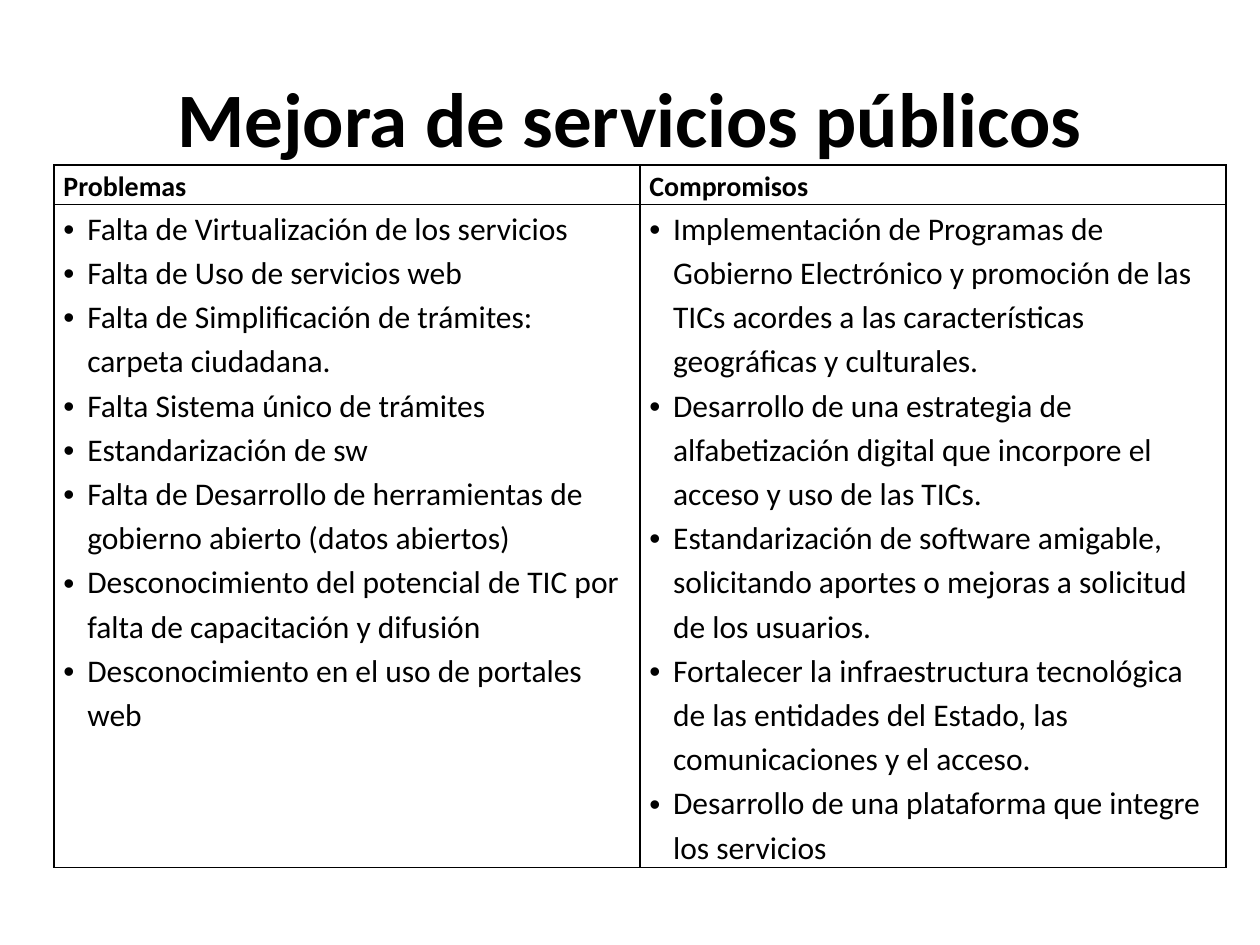
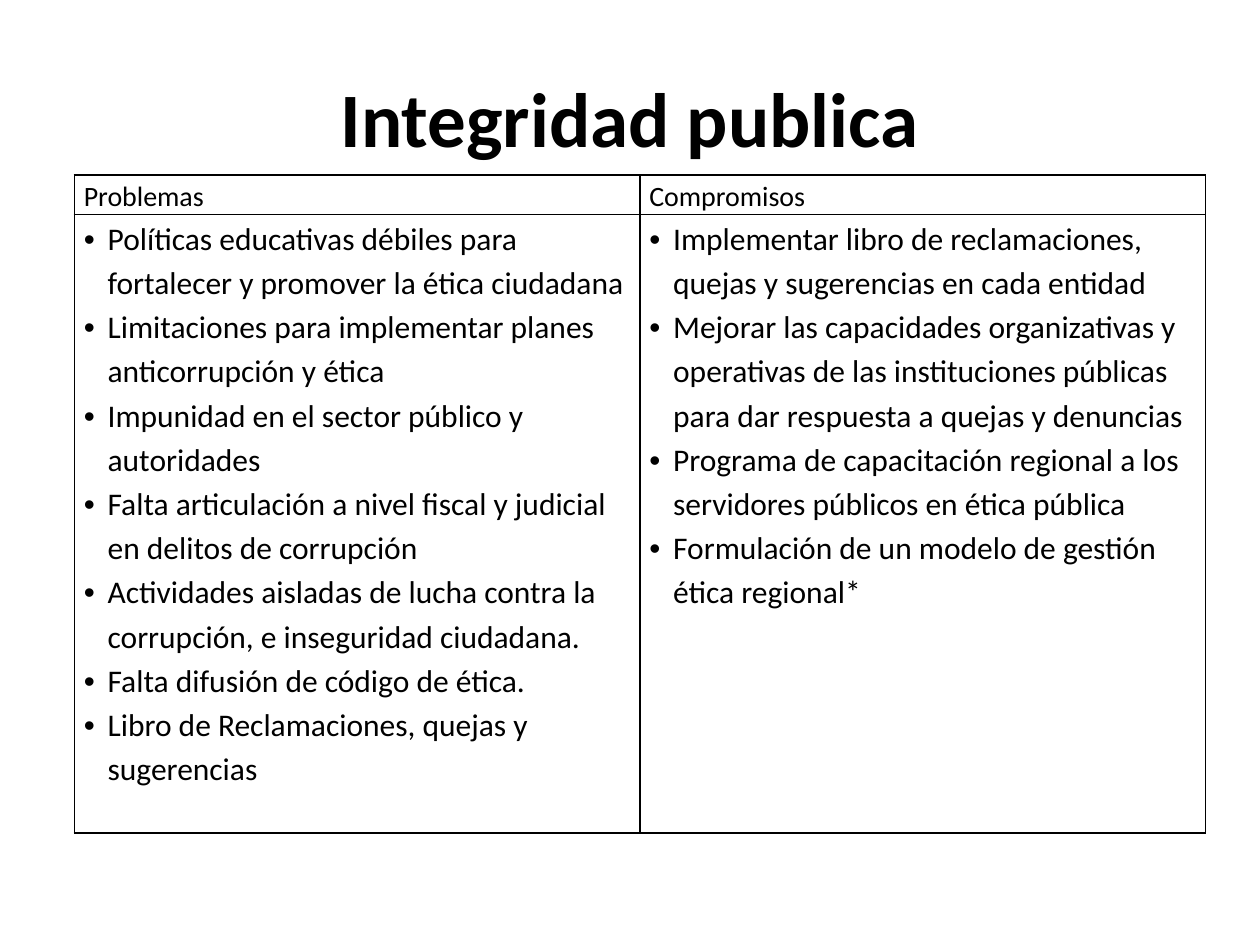
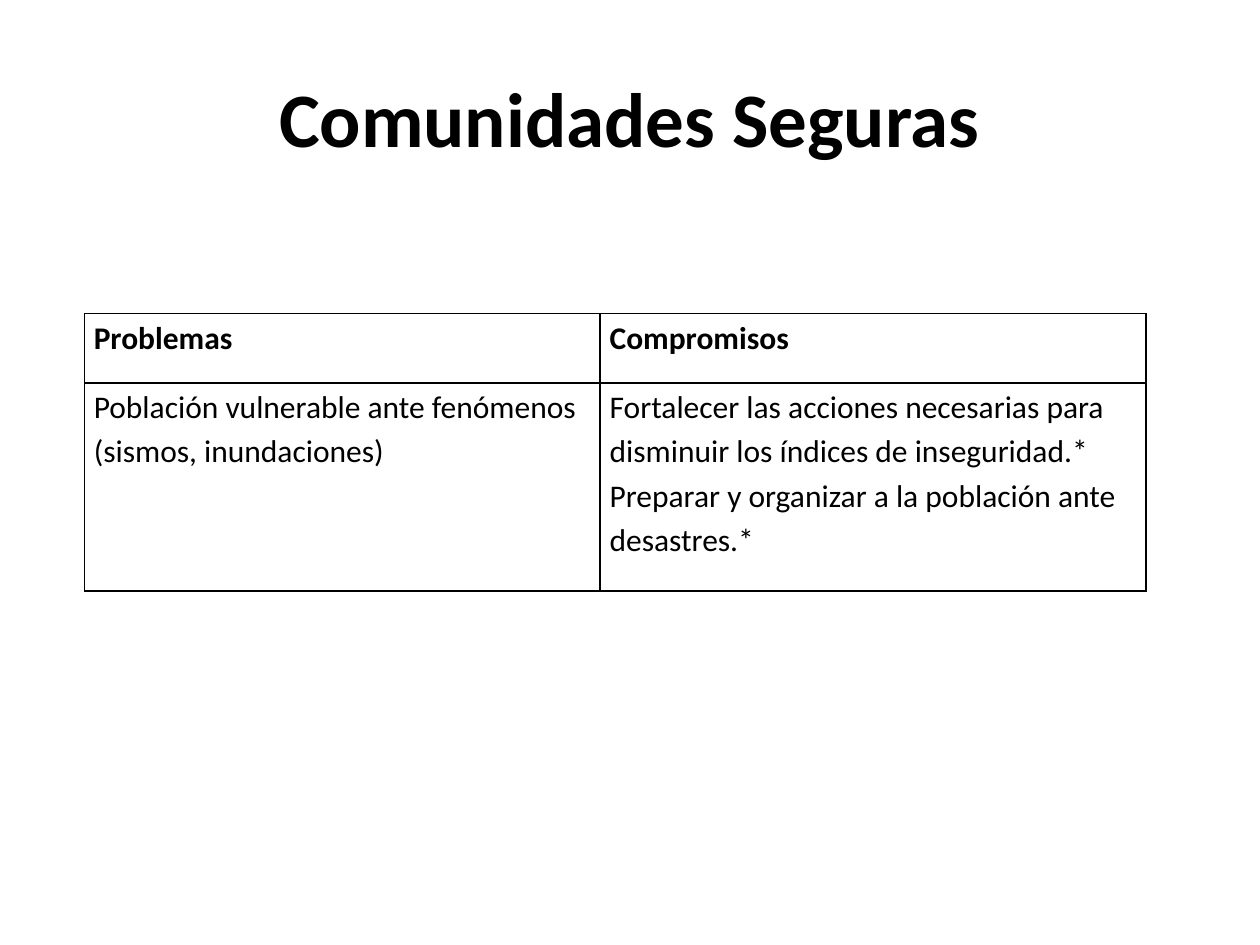
from lxml.etree import SubElement
from pptx import Presentation
from pptx.dml.color import RGBColor
from pptx.enum.text import MSO_ANCHOR as Anchor, PP_ALIGN as Align
from pptx.oxml.ns import qn
from pptx.util import Cm, Pt

TITLE_ONLY = 5
HEADINGS = ["Problemas", "Compromisos"]


def color(value):
    return RGBColor.from_string(value)


def write(tf, lines, size=18, bold=False, ink="000000", font="Calibri",
          align=Align.LEFT, spacing=None, bullet=False, indent=Cm(0.48)):
    """Fill a text frame with one paragraph per line."""
    for i, line in enumerate(lines):
        p = tf.paragraphs[0] if i == 0 else tf.add_paragraph()
        p.alignment = align
        if bullet:
            pPr = p._p.get_or_add_pPr()
            pPr.set("marL", str(indent))
            pPr.set("indent", str(-indent))
            SubElement(pPr, qn("a:buFont"), typeface="Arial")
            SubElement(pPr, qn("a:buChar"), char="•")
        if spacing:
            p.line_spacing = spacing
        r = p.add_run()
        r.text = line
        r.font.name, r.font.size, r.font.bold = font, Pt(size), bold
        r.font.color.rgb = color(ink)


class Deck:
    ink = "000000"
    border = Pt(1)
    spacing = 1.15
    margin = Cm(0.19)

    def __init__(self):
        self.prs = Presentation()
        self.prs.slide_width, self.prs.slide_height = Cm(25.4), Cm(19.05)
        self.s = None

    def slide(self, title):
        self.s = self.prs.slides.add_slide(self.prs.slide_layouts[TITLE_ONLY])
        sp = self.s.shapes.title
        sp.left, sp.top, sp.width, sp.height = Cm(1.27), Cm(0.76), Cm(22.86), Cm(3.18)
        tf = sp.text_frame
        tf.word_wrap = True
        tf.vertical_anchor = Anchor.MIDDLE
        write(tf, [title], size=44, bold=True, ink=self.ink, align=Align.CENTER)

    def cell(self, cell, lines, **fmt):
        cell.margin_left = cell.margin_right = self.margin
        cell.margin_top = cell.margin_bottom = 0
        cell.vertical_anchor = Anchor.TOP
        tcPr = cell._tc.get_or_add_tcPr()
        for side in ("lnL", "lnR", "lnT", "lnB"):
            ln = SubElement(tcPr, qn(f"a:{side}"), w=str(self.border))
            fill = SubElement(ln, qn("a:solidFill"))
            SubElement(fill, qn("a:srgbClr"), val=self.ink)
        cell.fill.background()
        write(cell.text_frame, lines, ink=self.ink, spacing=self.spacing, **fmt)

    def table(self, left, top, widths, heights, columns,
              head_size=16, head_bold=True, bullet=True):
        frame = self.s.shapes.add_table(2, len(columns), Cm(left), Cm(top),
                                        Cm(sum(widths)), Cm(sum(heights)))
        table = frame.table
        table.first_row = table.horz_banding = False
        for row, height in zip(table.rows, heights):
            row.height = Cm(height)
        for i, (width, lines) in enumerate(zip(widths, columns)):
            table.columns[i].width = Cm(width)
            self.cell(table.cell(0, i), [HEADINGS[i]], size=head_size, bold=head_bold)
            self.cell(table.cell(1, i), lines, bullet=bullet)


def main():
    deck = Deck()

    # Public services
    deck.slide("Mejora de servicios públicos")
    deck.table(1.09, 3.33, [11.81, 11.81], [0.79, 13.36], [
        ["Falta de Virtualización de los servicios",
         "Falta de Uso de servicios web",
         "Falta de Simplificación de trámites: carpeta ciudadana.",
         "Falta Sistema único de trámites",
         "Estandarización de sw",
         "Falta de Desarrollo de herramientas de gobierno abierto (datos abiertos)",
         "Desconocimiento del potencial de TIC por falta de capacitación y difusión",
         "Desconocimiento en el uso de portales web"],
        ["Implementación de Programas de Gobierno Electrónico y promoción de las TICs "
         "acordes a las características geográficas y culturales.",
         "Desarrollo de una estrategia de alfabetización digital que incorpore el "
         "acceso y uso de las TICs.",
         "Estandarización de software amigable, solicitando aportes o mejoras a "
         "solicitud de los usuarios.",
         "Fortalecer la infraestructura tecnológica de las entidades del Estado, las "
         "comunicaciones y el acceso.",
         "Desarrollo de una plataforma que integre los servicios"],
    ])

    # Public integrity
    deck.slide("Integridad publica")
    deck.table(1.5, 3.53, [11.4, 11.4], [0.79, 12.47], [
        ["Políticas educativas débiles para fortalecer y promover la ética ciudadana",
         "Limitaciones para implementar planes anticorrupción y ética",
         "Impunidad en el sector público y autoridades",
         "Falta articulación a nivel fiscal y judicial en delitos de corrupción",
         "Actividades aisladas de lucha contra la corrupción, e inseguridad ciudadana.",
         "Falta difusión de código de ética.",
         "Libro de Reclamaciones, quejas y sugerencias"],
        ["Implementar libro de reclamaciones, quejas y sugerencias en cada entidad",
         "Mejorar las capacidades organizativas y operativas de las instituciones "
         "públicas para dar respuesta a quejas y denuncias",
         "Programa de capacitación regional a los servidores públicos en ética pública",
         "Formulación de un modelo de gestión ética regional*"],
    ], head_bold=False)

    # Safe communities
    deck.slide("Comunidades Seguras")
    deck.table(1.7, 6.32, [10.4, 11], [1.4, 4.19], [
        ["Población vulnerable ante fenómenos (sismos, inundaciones)"],
        ["Fortalecer las acciones necesarias para disminuir los índices de inseguridad.*",
         "Preparar y organizar a la población ante desastres.*"],
    ], head_size=18, bullet=False)

    deck.prs.save("out.pptx")


if __name__ == "__main__":
    main()
